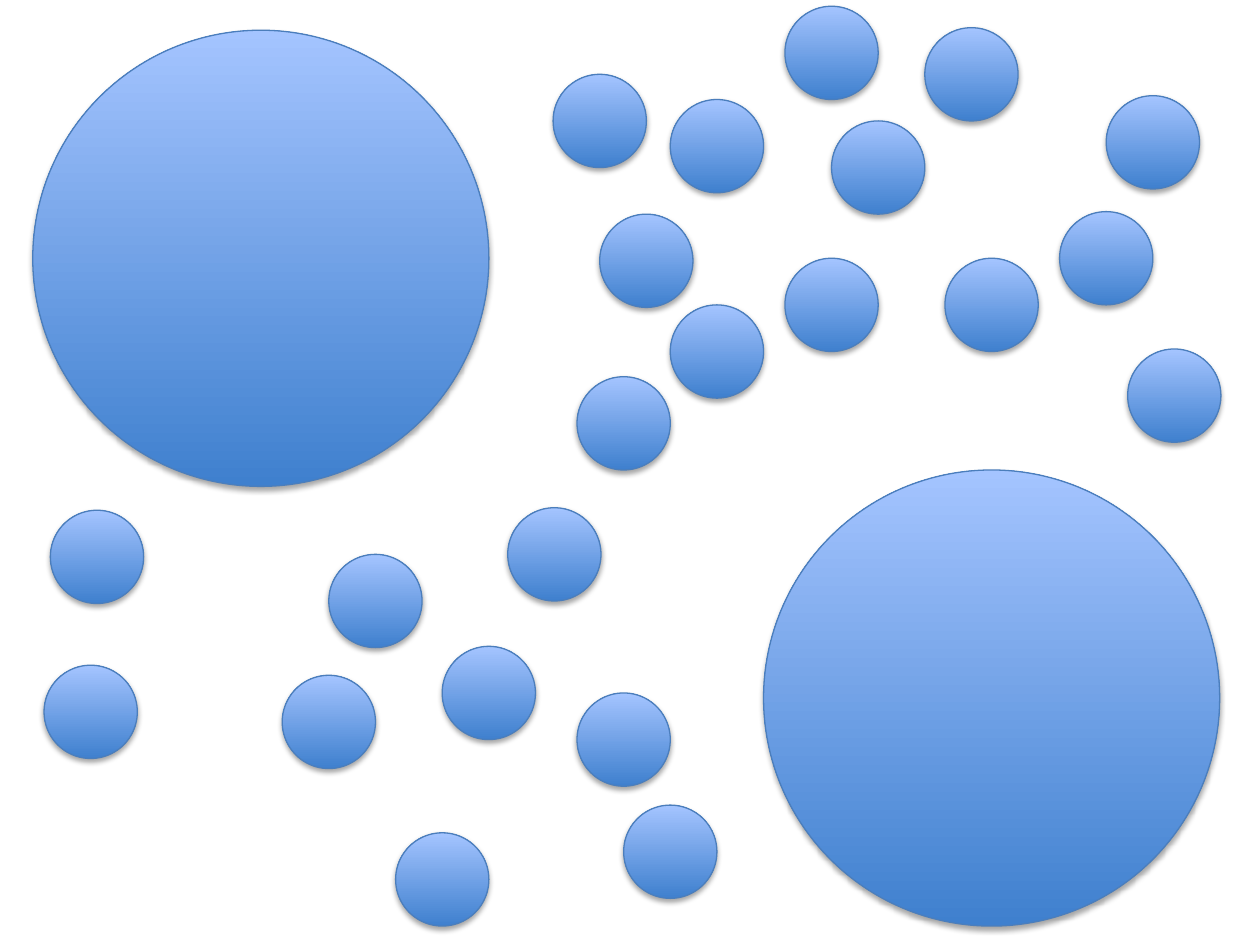
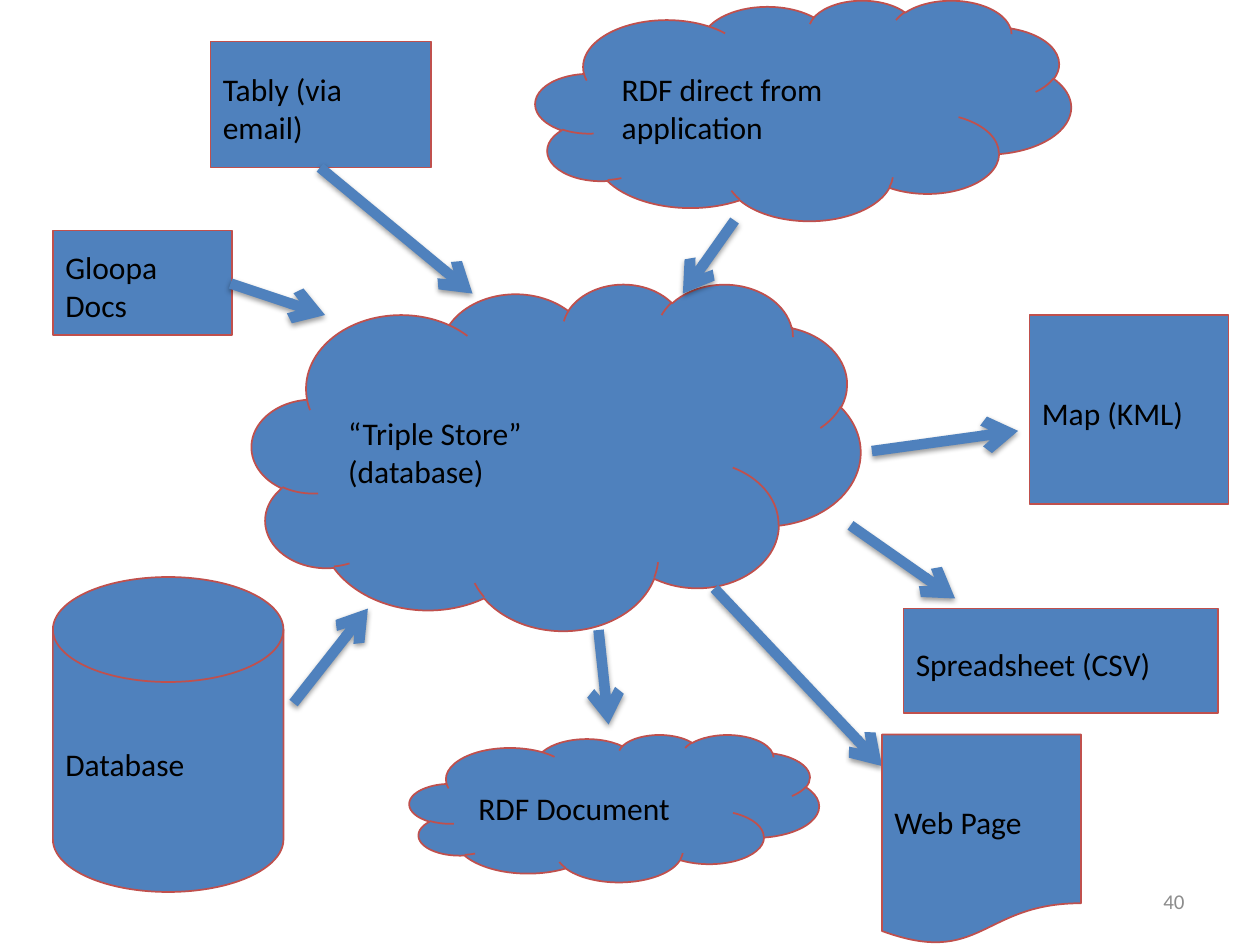
from pptx import Presentation
from pptx.dml.color import RGBColor
from pptx.enum.shapes import MSO_CONNECTOR, MSO_SHAPE
from pptx.enum.text import MSO_ANCHOR, PP_ALIGN
from pptx.oxml import parse_xml
from pptx.oxml.ns import nsdecls
from pptx.util import Emu, Pt

PX = 9144
FONT = "Calibri"
COLORS = {
    "circle_bottom": "3F80CE",
    "circle_top": "A4C4FF",
    "circle_line": "4B7EBC",
    "block": "4F81BD",
    "block_line": "C0504D",
    "text": "000000",
    "page_number": "8C8C8C",
    "shadow": "000000",
}

LARGE, SMALL = 362, 74
LARGE_CIRCLES = [(26, 24), (606, 373)]
SMALL_CIRCLES = [
    (532, 79), (623, 205), (660, 96), (841, 168), (734, 22), (476, 170),
    (35, 528), (224, 536), (314, 661), (351, 513), (495, 639), (458, 550),
    (623, 5), (439, 59), (532, 242), (878, 76), (40, 405), (403, 403),
    (261, 440), (458, 299), (895, 277), (750, 205),
]

STORE_AND_INPUTS = [
    (MSO_SHAPE.CLOUD, (200, 225, 483, 275), ["“Triple Store”", "(database)"]),
    (MSO_SHAPE.RECTANGLE, (42, 183, 142, 83), ["Gloopa Docs"]),
    (MSO_SHAPE.RECTANGLE, (167, 33, 175, 100), ["Tably (via email)"]),
    (MSO_SHAPE.CLOUD, (425, 0, 425, 175), ["RDF direct from application"]),
    (MSO_SHAPE.FLOWCHART_MAGNETIC_DISK, (42, 458, 183, 250), ["Database"]),
]
OUTPUTS = [
    (MSO_SHAPE.RECTANGLE, (717, 483, 250, 83), ["Spreadsheet (CSV)"]),
    (MSO_SHAPE.CLOUD, (325, 583, 325, 117), ["RDF Document"]),
    (MSO_SHAPE.FLOWCHART_DOCUMENT, (700, 583, 158, 167), ["Web Page"]),
    (MSO_SHAPE.RECTANGLE, (817, 250, 158, 150), ["Map (KML)"]),
]
ARROWS = [
    (583, 175, 542, 233),
    (254, 133, 375, 233),
    (675, 417, 758, 475),
    (567, 467, 700, 608),
    (183, 225, 258, 250),
    (233, 558, 292, 483),
    (475, 500, 483, 575),
    (692, 358, 808, 342),
]


def color(name):
    """Return a named colour of the deck."""
    return RGBColor.from_string(COLORS[name])


def scaled(*lengths):
    """Turn px lengths into EMU."""
    return [Emu(length * PX) for length in lengths]


def set_line(shape, name, width):
    """Give a shape or connector a solid line."""
    shape.line.color.rgb = color(name)
    shape.line.width = Pt(width)


def add_shadow(shape, opacity, distance):
    """Add a soft shadow that falls straight down."""
    shape._element.spPr.append(parse_xml(
        f'<a:effectLst {nsdecls("a")}>'
        f'<a:outerShdw blurRad="{Pt(3.1)}" dist="{Pt(distance)}" dir="5400000" rotWithShape="0">'
        f'<a:srgbClr val="{COLORS["shadow"]}"><a:alpha val="{opacity * 1000}"/></a:srgbClr>'
        '</a:outerShdw></a:effectLst>'))


def add_circle(page, left, top, size):
    """Draw a circle that fades from light at the top to dark."""
    circle = page.shapes.add_shape(MSO_SHAPE.OVAL, *scaled(left, top, size, size))
    circle.fill.gradient()
    circle.fill.gradient_angle = 90
    for stop, name in zip(circle.fill.gradient_stops, ("circle_bottom", "circle_top")):
        stop.color.rgb = color(name)
    set_line(circle, "circle_line", 0.75)
    add_shadow(circle, 35, 1.8)


def write(shape, lines, size, name, align):
    """Write one paragraph per line, centred in height."""
    frame = shape.text_frame
    frame.word_wrap = True
    frame.vertical_anchor = MSO_ANCHOR.MIDDLE
    frame.text = "\n".join(lines)
    for para in frame.paragraphs:
        para.alignment = align
        para.font.name = FONT
        para.font.size = Pt(size)
        para.font.color.rgb = color(name)


def add_block(page, kind, place, lines):
    """Draw a labelled part of the data flow."""
    block = page.shapes.add_shape(kind, *scaled(*place))
    block.shadow.inherit = False
    block.fill.solid()
    block.fill.fore_color.rgb = color("block")
    set_line(block, "block_line", 1)
    write(block, lines, 18, "text", PP_ALIGN.LEFT)
    block.text_frame.margin_bottom = 0


def add_arrow(page, *ends):
    """Draw a thick arrow between two points."""
    arrow = page.shapes.add_connector(MSO_CONNECTOR.STRAIGHT, *scaled(*ends))
    set_line(arrow, "block", 6)
    arrow.line._get_or_add_ln().append(parse_xml(f'<a:tailEnd {nsdecls("a")} type="arrow"/>'))
    add_shadow(arrow, 38, 1.6)


def add_page_number(page, number):
    """Write the page number at the bottom right."""
    box = page.shapes.add_textbox(*scaled(717, 695, 233, 40))
    write(box, [number], 12, "page_number", PP_ALIGN.RIGHT)


def build_circles(page):
    """Fill a page with two large and many small circles."""
    for size, corners in ((LARGE, LARGE_CIRCLES), (SMALL, SMALL_CIRCLES)):
        for left, top in corners:
            add_circle(page, left, top, size)


def build_data_flow(page):
    """Show what flows into and out of the triple store."""
    add_page_number(page, "40")
    for block in STORE_AND_INPUTS:
        add_block(page, *block)
    for ends in ARROWS:
        add_arrow(page, *ends)
    for block in OUTPUTS:
        add_block(page, *block)


def main():
    """Build and save the deck."""
    deck = Presentation()
    deck.slide_width, deck.slide_height = scaled(1000, 750)
    for build in (build_circles, build_data_flow):
        build(deck.slides.add_slide(deck.slide_layouts[6]))
    deck.save("out.pptx")


if __name__ == "__main__":
    main()
